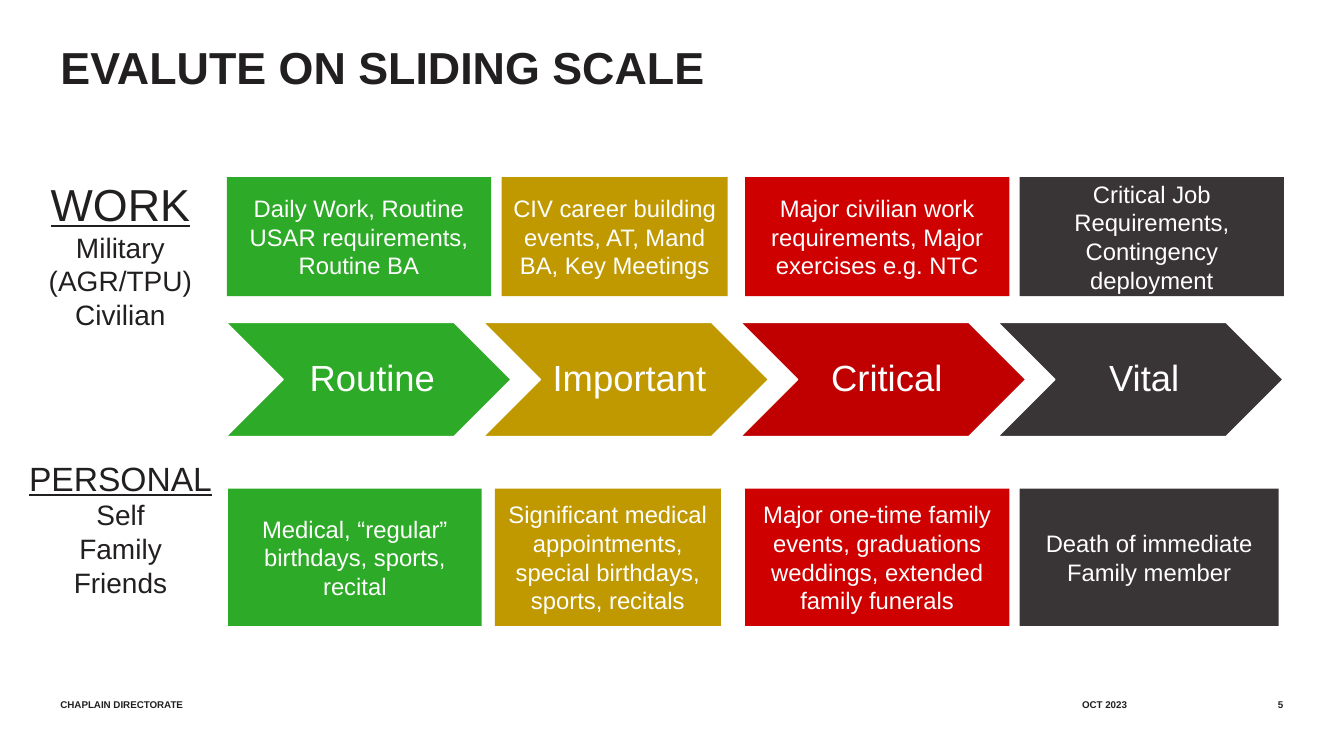
import pptx
import pptx.dml.color
import pptx.enum.shapes
import pptx.enum.text
import pptx.util

Pt = pptx.util.Pt
ALIGN = pptx.enum.text.PP_ALIGN
ANCHOR = pptx.enum.text.MSO_ANCHOR
SHAPE = pptx.enum.shapes.MSO_SHAPE
INK, WHITE = "221F20", "FFFFFF"
GREEN, GOLD, RED, DEEP_RED, CHARCOAL = "2DAA27", "C09900", "CF0000", "C00000", "393436"


def color(hex_value):
    """Turn a hex string into a colour."""
    return pptx.dml.color.RGBColor.from_string(hex_value)


def set_frame(tf, margins=(7.2, 3.6, 7.2, 3.6), **attrs):
    """Set the margins and other attributes of a text frame."""
    values = {"word_wrap": True, "auto_size": pptx.enum.text.MSO_AUTO_SIZE.NONE}
    values.update(attrs)
    for side, margin in zip(("left", "top", "right", "bottom"), margins):
        values["margin_" + side] = Pt(margin)
    for name, value in values.items():
        setattr(tf, name, value)


def write(p, text, size, hex_value, align=ALIGN.CENTER, spacing=1.0, **attrs):
    """Write one formatted run in a paragraph."""
    p.alignment, p.line_spacing = align, spacing
    r = p.add_run()
    r.text = text
    values = {"name": "Arial", "size": Pt(size), **attrs}
    for name, value in values.items():
        setattr(r.font, name, value)
    r.font.color.rgb = color(hex_value)


def add_filled(s, kind, box, fill):
    """Add a plain filled shape without outline or shadow."""
    sp = s.shapes.add_shape(kind, *map(Pt, box))
    sp.shadow.inherit = False
    sp.fill.solid()
    sp.fill.fore_color.rgb = color(fill)
    sp.line.fill.background()
    return sp


def add_title(s, box, text):
    """Place the slide title in its placeholder."""
    sp = s.shapes.title
    sp.left, sp.top, sp.width, sp.height = map(Pt, box)
    set_frame(sp.text_frame, (0, 0, 0, 0), vertical_anchor=ANCHOR.TOP)
    write(sp.text_frame.paragraphs[0], text, 32, INK, ALIGN.LEFT, 0.9, bold=True)


def add_footer(s, box, items):
    """Place the footer items at their offsets along a strip."""
    left, top, _, height = box
    for offset, width, align, text in items:
        sp = s.shapes.add_textbox(Pt(left + offset), Pt(top), Pt(width), Pt(height))
        set_frame(sp.text_frame, (0, 0, 0, 0), vertical_anchor=ANCHOR.BOTTOM)
        write(sp.text_frame.paragraphs[0], text, 7, INK, align, bold=True)


def add_label(s, box, heading, size, lines):
    """Place an underlined heading with its lines below."""
    tf = s.shapes.add_textbox(*map(Pt, box)).text_frame
    set_frame(tf)
    write(tf.paragraphs[0], heading, size, INK, underline=True)
    for line in lines:
        write(tf.add_paragraph(), line, 20, INK)


def add_scale(s, box, levels):
    """Place overlapping chevrons evenly across a box."""
    left, top, width, height = box
    chevron = 203.7
    step = (width - chevron) / (len(levels) - 1)
    for i, (text, fill) in enumerate(levels):
        sp = add_filled(s, SHAPE.CHEVRON, (left + i * step, top, chevron, height), fill)
        sp.line.color.rgb = color(WHITE)
        sp.line.width = Pt(1)
        set_frame(sp.text_frame, (8, 2.7, 2.7, 2.7), vertical_anchor=ANCHOR.MIDDLE)
        write(sp.text_frame.paragraphs[0], text, 26, WHITE, spacing=0.9)


def add_examples(s, box, examples):
    """Place a row of coloured example cards at their offsets in a box."""
    left, top, _, height = box
    for (offset, width, text), fill in zip(examples, (GREEN, GOLD, RED, CHARCOAL)):
        sp = add_filled(s, SHAPE.RECTANGLE, (left + offset, top, width, height), fill)
        set_frame(sp.text_frame, vertical_anchor=ANCHOR.MIDDLE)
        write(sp.text_frame.paragraphs[0], text, 17, WHITE)


def build_slide(prs):
    """Build the sliding scale slide."""
    s = prs.slides.add_slide(prs.slide_layouts[5])
    add_title(s, (43.2, 32.4, 648, 72), "EVALUTE ON SLIDING SCALE")
    add_label(s, (23, 122.4, 126, 119), "WORK", 32,
              ["Military", "(AGR/TPU)", "Civilian"])
    add_examples(s, (162, 126.6, 755, 85), [
        (0, 188.8, "Daily Work, Routine USAR requirements, Routine BA"),
        (196.4, 161.4, "CIV career building events, AT, Mand BA, Key Meetings"),
        (370.2, 188.8, "Major civilian work requirements, Major exercises e.g. NTC"),
        (566.4, 188.8, "Critical Job Requirements, Contingency deployment"),
    ])
    add_scale(s, (161.5, 230.4, 755, 81.4), [
        ("Routine", GREEN), ("Important", GOLD),
        ("Critical", DEEP_RED), ("Vital", CHARCOAL),
    ])
    add_label(s, (-14.4, 323.3, 201, 109), "PERSONAL", 24,
              ["Self", "Family", "Friends"])
    add_examples(s, (163, 349, 750, 98), [
        (0, 181, "Medical, “regular” birthdays, sports, recital"),
        (190.5, 161.4, "Significant medical appointments, special birthdays, "
                       "sports, recitals"),
        (369.2, 188.8, "Major one-time family events, graduations weddings, "
                       "extended family funerals"),
        (565.4, 185, "Death of immediate Family member"),
    ])
    add_footer(s, (43.2, 493.2, 873.4, 14.4), [
        (0, 422.6, ALIGN.LEFT, "CHAPLAIN DIRECTORATE"),
        (676.8, 85, ALIGN.RIGHT, "OCT 2023"),
        (789.8, 83.6, ALIGN.RIGHT, "5"),
    ])


def main():
    """Create and save the presentation."""
    prs = pptx.Presentation()
    prs.slide_width, prs.slide_height = Pt(960), Pt(540)
    build_slide(prs)
    prs.save("out.pptx")


if __name__ == "__main__":
    main()
